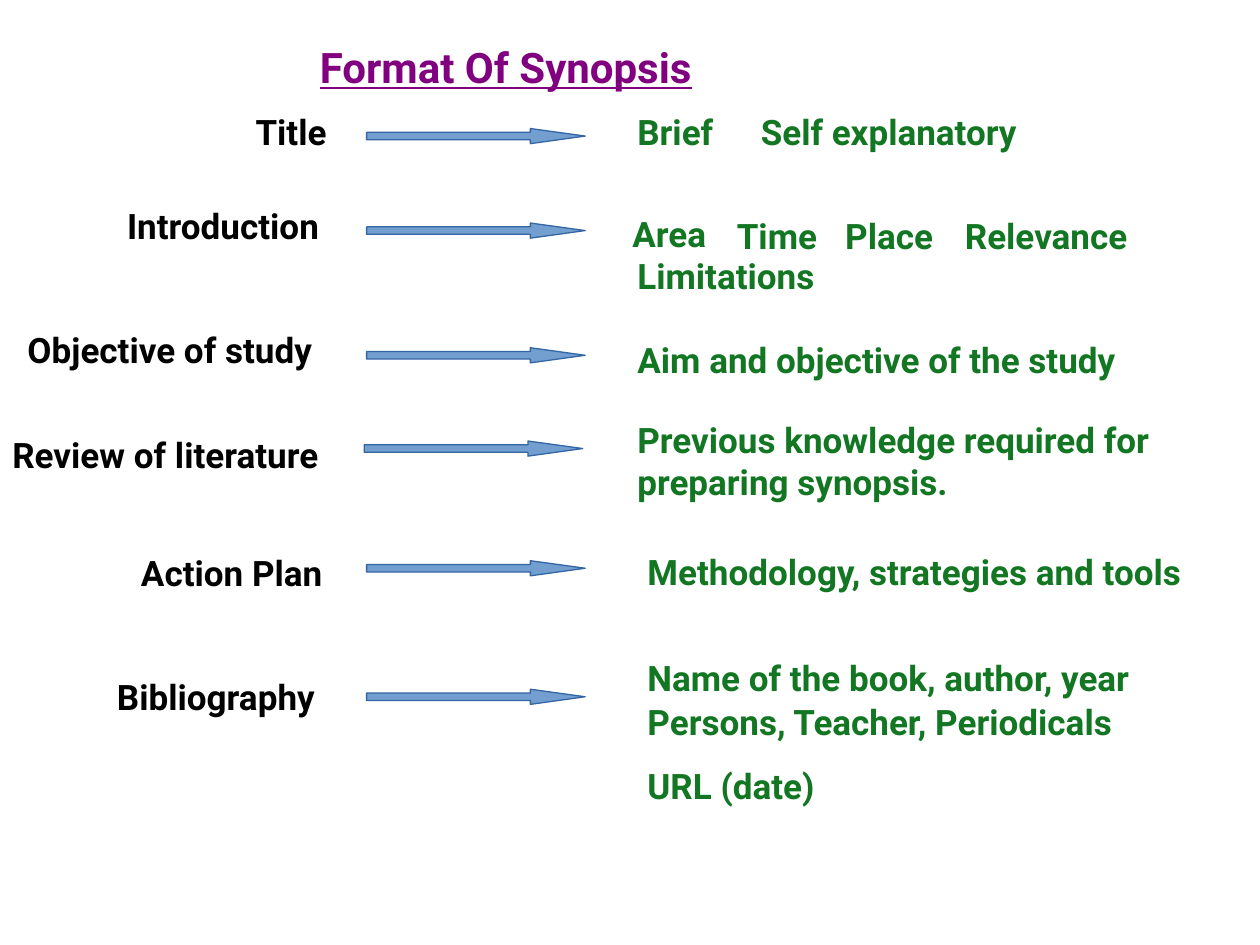
"""Build the slide that lists the parts of a synopsis and what each one holds."""
from dataclasses import dataclass

from pptx import Presentation, util as u
from pptx.dml import color
from pptx.enum import shapes, text


@dataclass(frozen=True)
class Theme:
    """Colours, font and type sizes."""
    font: str = "Roboto"
    heading: str = "800080"
    label: str = "000000"
    detail: str = "127622"
    arrow: str = "729FCF"
    outline: str = "3465A4"
    heading_size: int = 24
    body_size: int = 20


class SynopsisSlide:
    """Places elements on a grid of 100 columns by 75 rows."""

    def __init__(self, deck, theme):
        """Add a blank slide and measure its grid."""
        self.theme = theme
        self.slide = deck.slides.add_slide(deck.slide_layouts[6])
        self.column = deck.slide_width / 100
        self.row = deck.slide_height / 75

    def place(self, left, top, width, height):
        """Turn columns and rows into slide lengths."""
        return (u.Emu(round(left * self.column)), u.Emu(round(top * self.row)),
                u.Emu(round(width * self.column)), u.Emu(round(height * self.row)))

    def bold_text(self, wording, box, ink, size):
        """Add bold text in a box."""
        frame = self.slide.shapes.add_textbox(*self.place(*box)).text_frame
        frame.word_wrap = True
        frame.vertical_anchor = text.MSO_ANCHOR.TOP
        line = frame.paragraphs[0]
        line.text = wording
        line.font.name = self.theme.font
        line.font.size = u.Pt(size)
        line.font.bold = True
        line.font.color.rgb = color.RGBColor.from_string(ink)
        return line

    def heading(self, wording, *box):
        """Add the underlined heading."""
        line = self.bold_text(wording, box, self.theme.heading, self.theme.heading_size)
        line.font.underline = True

    def label(self, wording, *box):
        """Add the name of a synopsis part."""
        self.bold_text(wording, box, self.theme.label, self.theme.body_size)

    def detail(self, wording, *box):
        """Add what a synopsis part holds."""
        self.bold_text(wording, box, self.theme.detail, self.theme.body_size)

    def arrow(self, left, top, width=17.35, height=1.2, head=4.35):
        """Add a thin block arrow with a long head."""
        pointer = self.slide.shapes.add_shape(
            shapes.MSO_SHAPE.RIGHT_ARROW, *self.place(left, top, width, height))
        pointer.adjustments[0] = 0.5
        pointer.adjustments[1] = head / height
        pointer.shadow.inherit = False
        pointer.fill.solid()
        pointer.fill.fore_color.rgb = color.RGBColor.from_string(self.theme.arrow)
        pointer.line.color.rgb = color.RGBColor.from_string(self.theme.outline)
        pointer.line.width = u.Pt(0)


PARTS = [
    (("Title", 19.3, 8.3, 8.3, 4.1), (29.1, 10.2),
     [("Brief", 49.6, 8.3, 9.1, 4.1),
      ("Self explanatory", 59.4, 8.3, 27.2, 4.1)]),
    (("Introduction", 9.1, 15.7, 18.9, 4.1), (29.1, 17.7),
     [("Area", 49.2, 16.4, 9.1, 4.1),
      ("Time", 57.5, 16.5, 8.7, 4.9),
      ("Place", 66.1, 16.5, 9.4, 4.1),
      ("Relevance", 75.6, 16.5, 16.5, 4.1),
      ("Limitations", 49.6, 19.7, 18.9, 4.1)]),
    (("Objective of study", 1.2, 25.6, 26.4, 5.1), (29.1, 27.6),
     [("Aim and objective of the study", 49.6, 26.4, 46.9, 4.1)]),
    (("Review of literature", 0, 33.9, 29.1, 4.1), (28.9, 35),
     [("Previous knowledge required for preparing synopsis.", 49.6, 32.7, 47.2, 7.2)]),
    (("Action Plan", 10.2, 43.3, 18.1, 4.1), (29.1, 44.5),
     [("Methodology, strategies and tools", 50.4, 43.2, 48.8, 4.1)]),
    (("Bibliography", 8.3, 53.1, 21.3, 6.9), (29.1, 54.7),
     [("Name of the book, author, year", 50.4, 51.6, 45.7, 7.2),
      ("Persons, Teacher, Periodicals", 50.4, 55.1, 47.2, 4.1),
      ("URL (date)", 50.4, 60.2, 26, 7.2)]),
]


def main():
    """Build and save the deck."""
    deck = Presentation()
    deck.slide_width, deck.slide_height = u.Inches(10), u.Inches(7.5)
    synopsis = SynopsisSlide(deck, Theme())
    synopsis.heading("Format Of Synopsis", 24.4, 2.8, 44.9, 5.5)
    for label, arrow, details in PARTS:
        synopsis.label(*label)
        synopsis.arrow(*arrow)
        for detail in details:
            synopsis.detail(*detail)
    deck.save("out.pptx")


if __name__ == "__main__":
    main()
